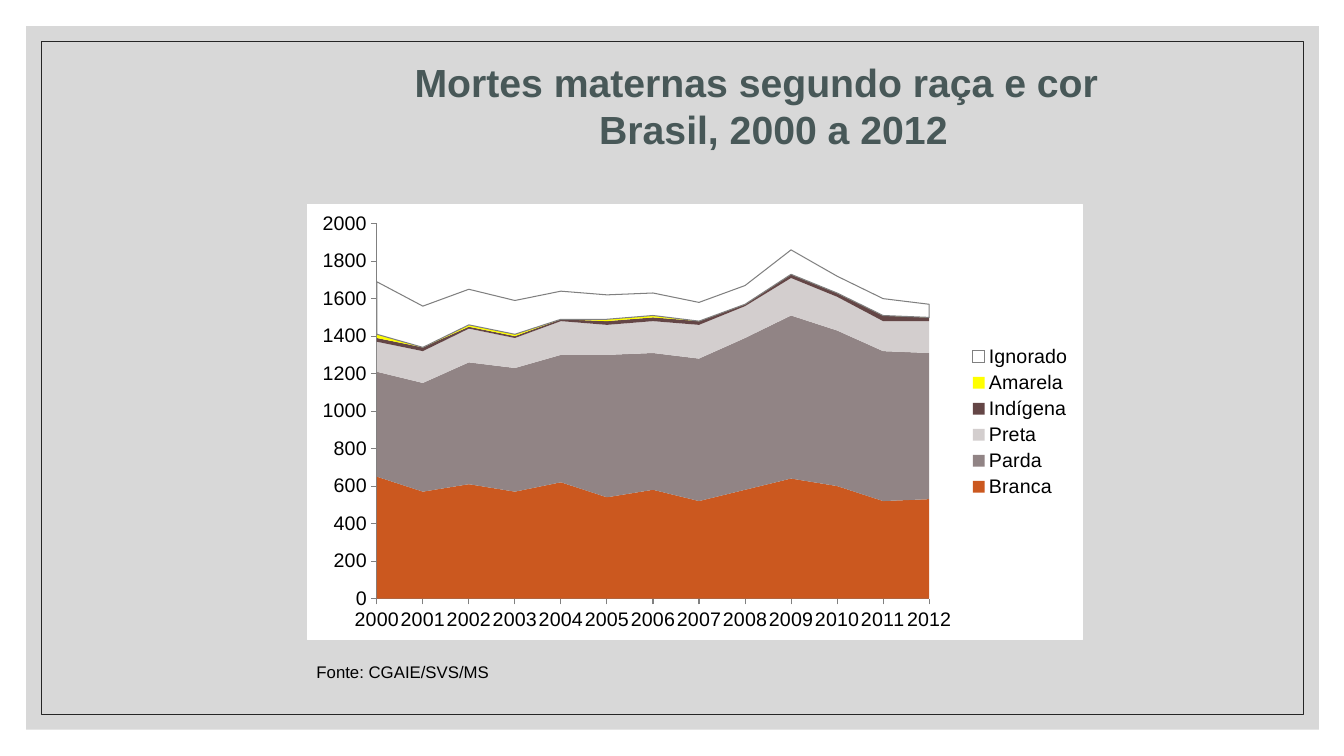
from pptx import Presentation
from pptx.chart.data import CategoryChartData
from pptx.dml.color import RGBColor
from pptx.enum.chart import XL_CHART_TYPE as CT, XL_LEGEND_POSITION as LP, XL_TICK_MARK as TM
from pptx.enum.shapes import MSO_SHAPE as SHAPE
from pptx.enum.text import PP_ALIGN as ALIGN
from pptx.oxml import parse_xml
from pptx.oxml.ns import nsdecls, qn
from pptx.util import Inches, Pt

THEME = {
    "font": "Arial", "title_size": 28, "chart_size": 14, "source_size": 12,
    "panel": "D8D8D8", "frame": "262626", "title": "485858",
    "text": "000000", "white": "FFFFFF", "axis": "808080",
}


def rgb(value):
    return RGBColor.from_string(value)


def add_run(p, text, size, color, bold=False):
    r = p.add_run()
    r.text = text
    r.font.name, r.font.size, r.font.bold = THEME["font"], Pt(size), bold
    r.font.color.rgb = rgb(color)


prs = Presentation()
prs.slide_width, prs.slide_height = Inches(13.33), Inches(7.5)
s = prs.slides.add_slide(prs.slide_layouts[6])

panel = s.shapes.add_shape(SHAPE.RECTANGLE, Inches(0.26), Inches(0.26), Inches(12.82), Inches(6.98))
panel.shadow.inherit = False
panel.fill.solid()
panel.fill.fore_color.rgb = rgb(THEME["panel"])
panel.line.fill.background()

frame = s.shapes.add_shape(SHAPE.RECTANGLE, Inches(0.41), Inches(0.41), Inches(12.52), Inches(6.68))
frame.shadow.inherit = False
frame.fill.background()
frame.line.color.rgb = rgb(THEME["frame"])
frame.line.width = Pt(0.5)

tf = s.shapes.add_textbox(Inches(2.4), Inches(0.53), Inches(9), Inches(1.25)).text_frame
tf.word_wrap = True
title_lines = [("Mortes maternas segundo raça e cor", 1.2), ("Brasil, 2000 a 2012", 1.54)]
for i, (text, indent) in enumerate(title_lines):
    p = tf.add_paragraph() if i else tf.paragraphs[0]
    p.alignment = ALIGN.CENTER
    p._p.get_or_add_pPr().set("marL", str(Inches(indent)))
    add_run(p, text, THEME["title_size"], THEME["title"], True)

series = [
    ("Branca", "CB581F", [650, 570, 610, 570, 620, 540, 580, 520, 580, 640, 600, 520, 530]),
    ("Parda", "918485", [560, 580, 650, 660, 680, 760, 730, 760, 810, 870, 830, 800, 780]),
    ("Preta", "D3CECE", [160, 170, 180, 160, 180, 160, 170, 180, 170, 200, 180, 160, 170]),
    ("Indígena", "644646", [20, 20, 10, 10, 10, 20, 20, 20, 10, 20, 20, 30, 20]),
    ("Amarela", "FFFF00", [20, 0, 10, 10, 0, 10, 10, 0, 0, 0, 0, 0, 0]),
    ("Ignorado", "FFFFFF", [280, 220, 190, 180, 150, 130, 120, 100, 100, 130, 90, 90, 70]),
]
data = CategoryChartData()
data.categories = [str(year) for year in range(2000, 2013)]
for name, _, values in series:
    data.add_series(name, values)
chart = s.shapes.add_chart(
    CT.AREA_STACKED, Inches(3.04), Inches(2.02), Inches(7.7), Inches(4.33), data
).chart
chart.has_title = False
chart.font.name, chart.font.size = THEME["font"], Pt(THEME["chart_size"])
chart.font.color.rgb = rgb(THEME["text"])
chart.has_legend = True
chart.legend.position = LP.RIGHT
chart.legend.include_in_layout = False

for area, (_, color, _) in zip(chart.plots[0].series, series):
    area.format.fill.solid()
    area.format.fill.fore_color.rgb = rgb(color)
    area.format.line.fill.background()
area.format.line.color.rgb = rgb(THEME["axis"])
area.format.line.width = Pt(0.75)

cat_axis, val_axis = chart.category_axis, chart.value_axis
for axis in (cat_axis, val_axis):
    axis.has_major_gridlines = False
    axis.major_tick_mark, axis.minor_tick_mark = TM.OUTSIDE, TM.NONE
    axis.format.line.color.rgb = rgb(THEME["axis"])
    axis.format.line.width = Pt(0.75)
    axis.tick_labels.font.size = Pt(THEME["chart_size"])
val_axis.minimum_scale, val_axis.maximum_scale, val_axis.major_unit = 0, 2000, 200
val_axis._element.find(qn("c:crossBetween")).set("val", "midCat")
cat_body = cat_axis._element.find(qn("c:txPr")).find(qn("a:bodyPr"))
if "rot" in cat_body.attrib:
    del cat_body.attrib["rot"]

plot_area = chart._chartSpace.chart.plotArea
for old in plot_area.findall(qn("c:layout")):
    plot_area.remove(old)
bounds = "".join(
    f'<c:{tag} val="{value}"/>'
    for tag, value in [("x", 0.09), ("y", 0.045), ("w", 0.7125), ("h", 0.861)]
)
plot_area.insert(0, parse_xml(
    f'<c:layout {nsdecls("c")}><c:manualLayout><c:layoutTarget val="inner"/>'
    f'<c:xMode val="edge"/><c:yMode val="edge"/>{bounds}</c:manualLayout></c:layout>'
))
white_fill = f'<a:solidFill><a:srgbClr val="{THEME["white"]}"/></a:solidFill>'
chart._chartSpace.chart.addnext(parse_xml(
    f'<c:spPr {nsdecls("c", "a")}>{white_fill}<a:ln w="{Pt(0.75)}">{white_fill}</a:ln></c:spPr>'
))

tf = s.shapes.add_textbox(Inches(3.04), Inches(6.52), Inches(2.41), Inches(0.3)).text_frame
tf.word_wrap = True
add_run(tf.paragraphs[0], "Fonte: CGAIE/SVS/MS", THEME["source_size"], THEME["text"])

prs.save("out.pptx")
